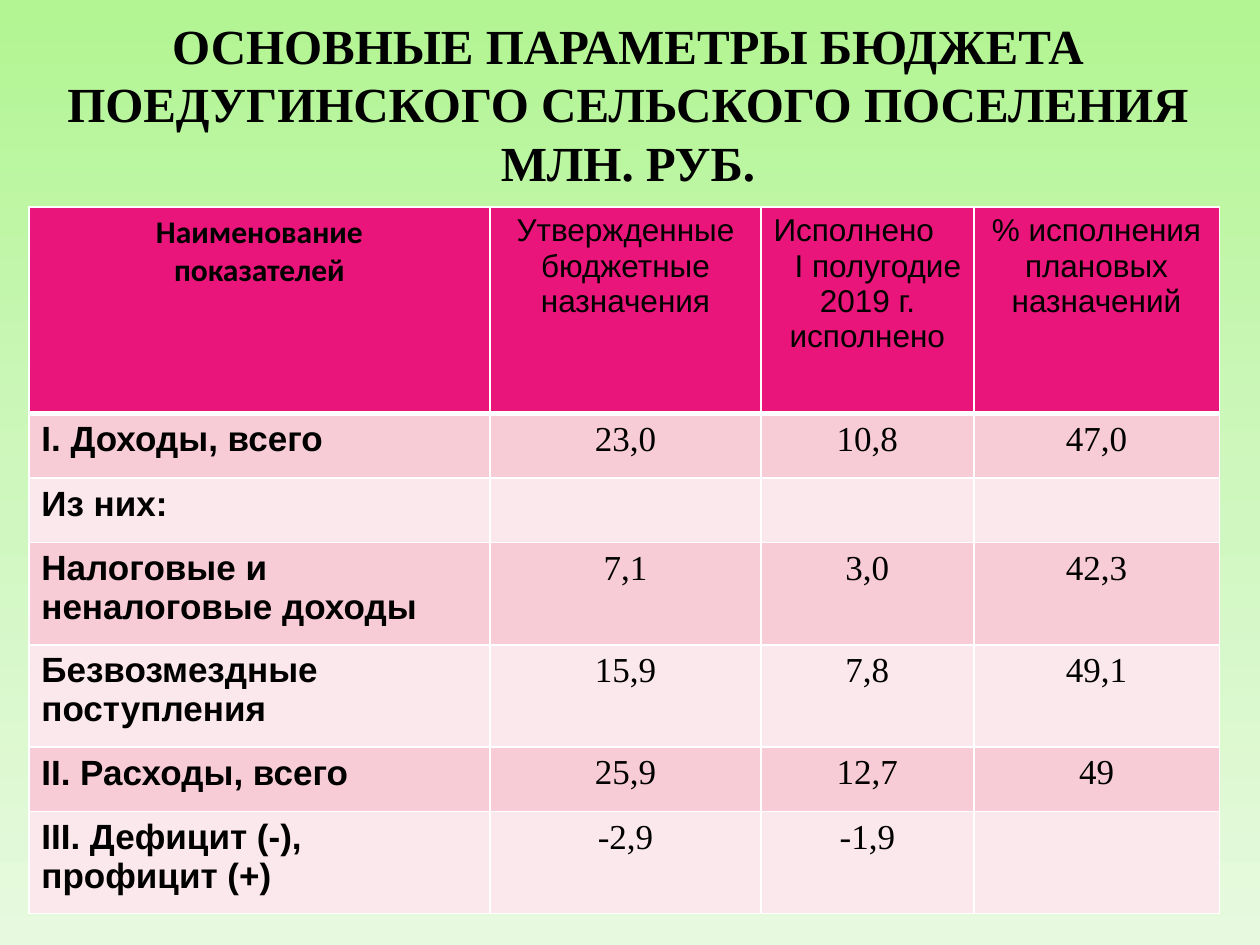
"""Build a slide with the main figures of a village budget."""
from pptx import Presentation
from pptx.dml.color import RGBColor
from pptx.enum.text import MSO_ANCHOR, PP_ALIGN
from pptx.oxml import parse_xml
from pptx.oxml.ns import nsdecls
from pptx.util import Cm, Pt

LEFT, MID, RIGHT = PP_ALIGN.LEFT, PP_ALIGN.CENTER, PP_ALIGN.RIGHT
CENTRE = MSO_ANCHOR.MIDDLE

TITLE = "ОСНОВНЫЕ ПАРАМЕТРЫ БЮДЖЕТА ПОЕДУГИНСКОГО СЕЛЬСКОГО ПОСЕЛЕНИЯ МЛН. РУБ."
HEADS = [
    [("Наименование", MID), ("показателей", MID)],
    [("Утвержденные бюджетные назначения", MID)],
    [("Исполнено", LEFT), ("I полугодие", RIGHT), ("2019 г. исполнено", MID)],
    [("% исполнения", MID), ("плановых назначений", MID)],
]
ROWS = [
    ("I. Доходы, всего", "23,0", "10,8", "47,0"),
    ("Из них:", "", "", ""),
    ("Налоговые и неналоговые доходы", "7,1", "3,0", "42,3"),
    ("Безвозмездные поступления", "15,9", "7,8", "49,1"),
    ("II. Расходы, всего", "25,9", "12,7", "49"),
    ("III. Дефицит (-), профицит (+)", "-2,9", "-1,9", ""),
]
WIDTHS = (9.3, 5.46, 4.29, 4.95)
HEAD, LOW, TALL = 4.17, 1.3, 2.06
HEIGHTS = (HEAD, LOW, LOW, TALL, TALL, LOW, TALL)

THEME = {
    "back": ((0, "B2F592"), (50, "CEF7BD"), (100, "E7FADF")),
    "ink": "000000", "line": "FFFFFF", "head": "EA157A",
    "bands": ("F7CCD7", "FBE8EC"),
    "title": ("Times New Roman", 28, True),
    "corner": ("Calibri", 18, True),
    "top": ("Arial", 18, False),
    "label": ("Arial", 20, True),
    "value": ("Times New Roman", 20, False),
}


def write(frame, lines, style):
    """Fill a text frame with aligned lines in one style."""
    for i, (text, align) in enumerate(lines):
        para = frame.paragraphs[0] if i == 0 else frame.add_paragraph()
        para.alignment = align
        run = para.add_run()
        run.text = text
        font = run.font
        font.name, size, font.bold = THEME[style]
        font.size = Pt(size)
        font.color.rgb = RGBColor.from_string(THEME["ink"])


def paint(cell, fill, base=1):
    """Set the fill and the four borders of a cell."""
    cell.fill.solid()
    cell.fill.fore_color.rgb = RGBColor.from_string(fill)
    props = cell._tc.get_or_add_tcPr()
    for i, (side, width) in enumerate(zip("LRTB", (1, 1, 1, base))):
        props.insert(i, parse_xml(
            f'<a:ln{side} {nsdecls("a")} w="{Pt(width)}"><a:solidFill>'
            f'<a:srgbClr val="{THEME["line"]}"/></a:solidFill></a:ln{side}>'))


def shade(slide):
    """Give the slide its gradient background."""
    stops = "".join(
        f'<a:gs pos="{pos * 1000}"><a:srgbClr val="{tint}"/></a:gs>'
        for pos, tint in THEME["back"])
    slide.element[0].insert(0, parse_xml(
        f'<p:bg {nsdecls("p", "a")}><p:bgPr><a:gradFill><a:gsLst>{stops}'
        '</a:gsLst><a:lin ang="5400000" scaled="0"/></a:gradFill>'
        '<a:effectLst/></p:bgPr></p:bg>'))


def main():
    """Lay out the title and the table, then save."""
    deck = Presentation()
    deck.slide_width, deck.slide_height = Cm(25.4), Cm(19.05)
    slide = deck.slides.add_slide(deck.slide_layouts[6])
    shade(slide)

    box = slide.shapes.add_textbox(Cm(0.58), Cm(0.79), Cm(24.16), Cm(2.59))
    box.text_frame.word_wrap = True
    box.text_frame.vertical_anchor = CENTRE
    write(box.text_frame, [(TITLE, MID)], "title")

    table = slide.shapes.add_table(
        len(HEIGHTS), len(WIDTHS), Cm(0.58), Cm(4.17),
        Cm(sum(WIDTHS)), Cm(sum(HEIGHTS))).table
    for col, width in zip(table.columns, WIDTHS):
        col.width = Cm(width)
    for row, height in zip(table.rows, HEIGHTS):
        row.height = Cm(height)

    for c, lines in enumerate(HEADS):
        cell = table.cell(0, c)
        paint(cell, THEME["head"], 3)
        write(cell.text_frame, lines, "top" if c else "corner")
    for r, row in enumerate(ROWS):
        for c, text in enumerate(row):
            cell = table.cell(r + 1, c)
            paint(cell, THEME["bands"][r % 2])
            if text:
                align, style = (MID, "value") if c else (LEFT, "label")
                write(cell.text_frame, [(text, align)], style)

    deck.save("out.pptx")


if __name__ == "__main__":
    main()
